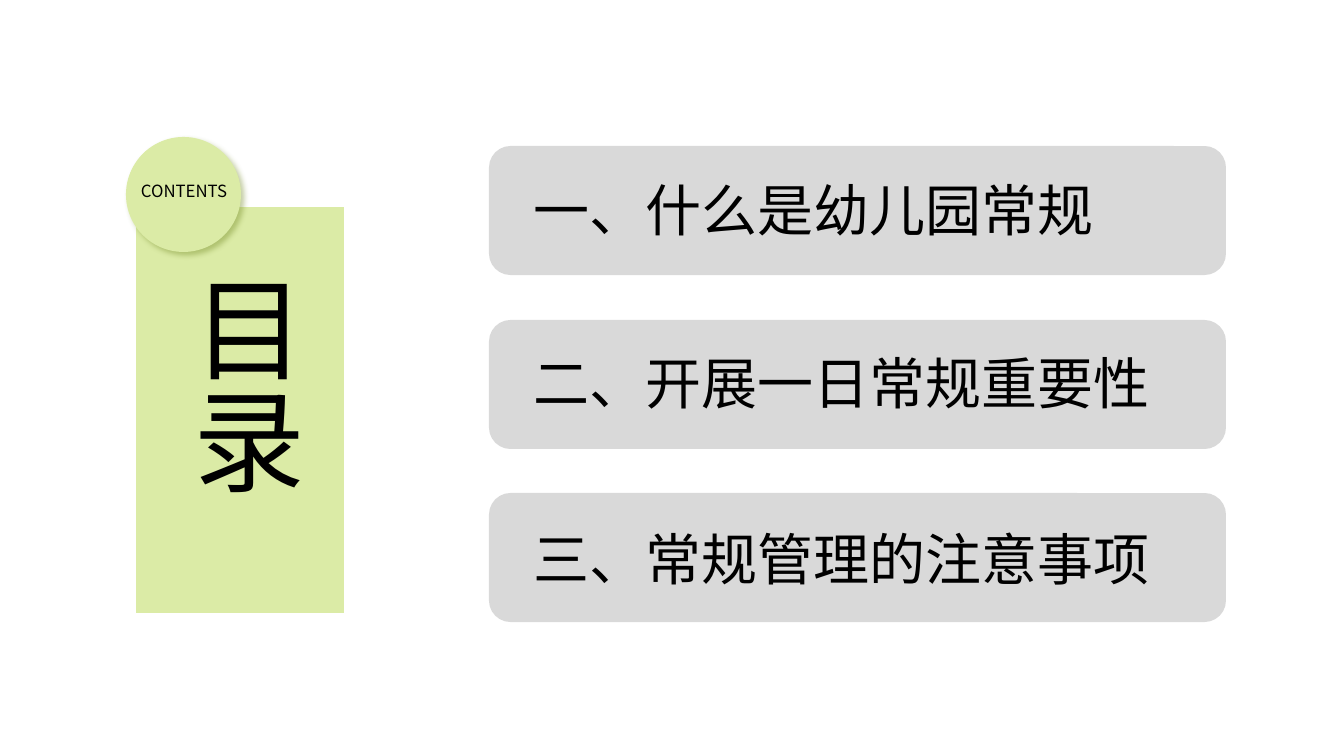
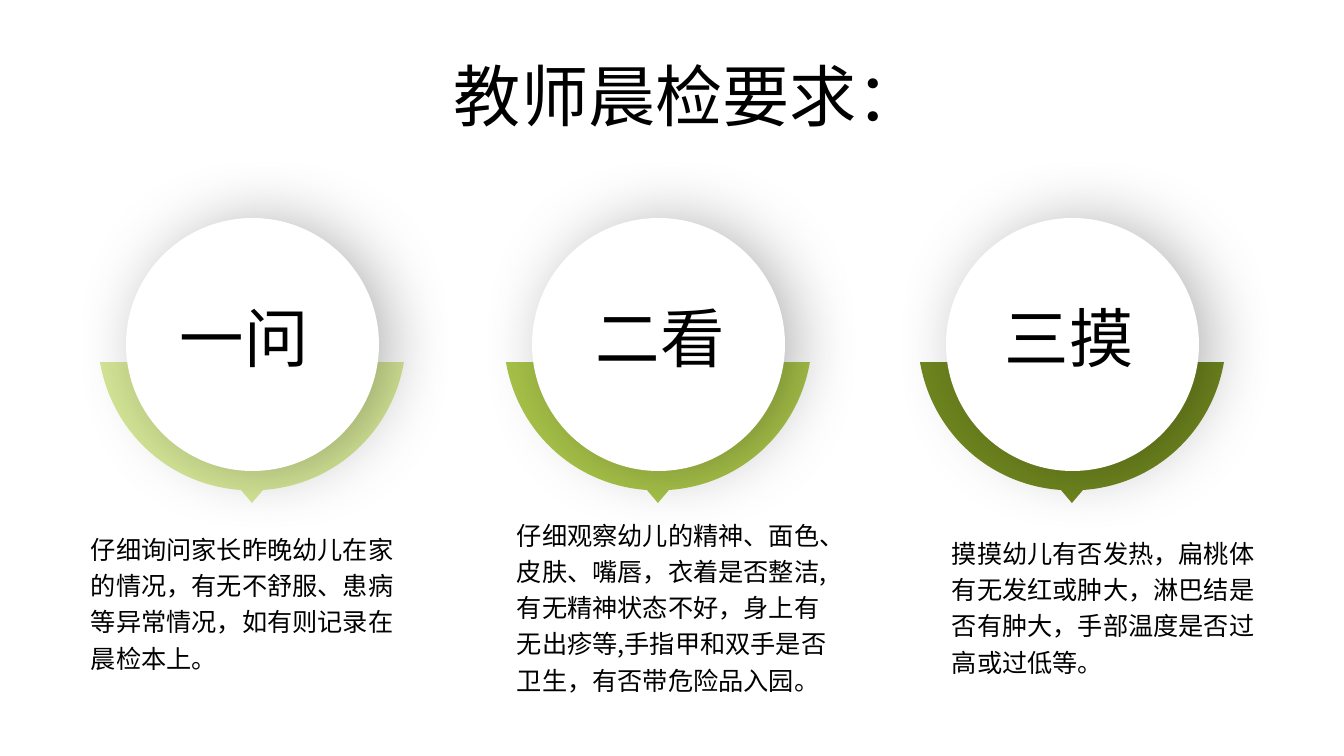
from lxml.etree import Element, SubElement
from pptx import Presentation
from pptx.dml.color import RGBColor
from pptx.enum.shapes import MSO_SHAPE
from pptx.enum.text import MSO_AUTO_SIZE, PP_ALIGN
from pptx.oxml.ns import qn
from pptx.util import Pt

PX = 12192000 / 1344
FONT = "Noto Sans CJK SC"
BLACK, WHITE, GREY = "000000", "FFFFFF", "D9D9D9"
PALE_GREEN = "DBEBA6"


def paint(shape, colour, shadow=None):
    """Fill without outline; shadow is (colour, opacity %, blur pt, distance pt, angle, scale %)."""
    shape.fill.solid()
    shape.fill.fore_color.rgb = RGBColor.from_string(colour)
    shape.line.fill.background()
    shape.shadow.inherit = False
    if shadow:
        shade, opacity, blur, distance, angle, scale = shadow
        effects = shape._element.spPr.find(qn("a:effectLst"))
        outer = SubElement(effects, qn("a:outerShdw"), blurRad=str(Pt(blur)),
                           dist=str(Pt(distance)), dir=str(angle * 60000),
                           sx=str(scale * 1000), sy=str(scale * 1000),
                           algn="ctr", rotWithShape="0")
        tint = SubElement(outer, qn("a:srgbClr"), val=shade)
        SubElement(tint, qn("a:alpha"), val=str(opacity * 1000))


def add_text(page, left, top, width, height, text, size, align=None, spacing=None):
    """Add a wrapping text box with one paragraph per line of text."""
    box = page.shapes.add_textbox(*(round(n * PX) for n in (left, top, width, height)))
    frame = box.text_frame
    frame.word_wrap = True
    frame.auto_size = MSO_AUTO_SIZE.SHAPE_TO_FIT_TEXT
    frame.text = text
    for para in frame.paragraphs:
        para.alignment = align
        para.line_spacing = spacing
        para.font.size = Pt(size)
        para.font.name = FONT
        para.font.color.rgb = RGBColor.from_string(BLACK)
        defaults = para._p.pPr.find(qn("a:defRPr"))
        SubElement(defaults, qn("a:ea"), typeface=FONT)
    return box


deck = Presentation()
deck.slide_width, deck.slide_height = round(1344 * PX), round(756 * PX)
blank = deck.slide_layouts[6]

# Contents
page = deck.slides.add_slide(blank)
chapters = [
    (146, 171, "一、什么是幼儿园常规"),
    (320, 344, "二、开展一日常规重要性"),
    (493, 520, "三、常规管理的注意事项"),
]
for bar_top, text_top, chapter in chapters:
    bar = page.shapes.add_shape(MSO_SHAPE.ROUNDED_RECTANGLE,
                                *(round(n * PX) for n in (489, bar_top, 737, 129)))
    paint(bar, GREY)
    add_text(page, 524, text_top, 667, 78, chapter, 40, PP_ALIGN.JUSTIFY)

panel = page.shapes.add_shape(MSO_SHAPE.RECTANGLE,
                              *(round(n * PX) for n in (137, 208, 206, 404)))
paint(panel, PALE_GREEN)
panel.line.color.rgb = RGBColor.from_string(PALE_GREEN)
panel.line.width = Pt(1)
SubElement(panel.line._ln, qn("a:miter"), lim="800000")
badge = page.shapes.add_shape(MSO_SHAPE.OVAL,
                              *(round(n * PX) for n in (126, 137, 115, 115)))
paint(badge, PALE_GREEN, ("6D841D", 40, 4, 3, 45, 100))
heading = add_text(page, 162, 263, 156, 257, "目录", 80, PP_ALIGN.JUSTIFY)
heading.text_frame._txBody.bodyPr.set("vert", "eaVert")
add_text(page, 131, 176, 114, 30, "CONTENTS", 12)

# Morning check
page = deck.slides.add_slide(blank)
add_text(page, 444, 49, 457, 92, "教师晨检要求：", 48)

DISC, DISC_INSET = 253, 26
BOWL_TOP = 362
# Corners of the bowl, clockwise from the right rim, measured from its top left
BOWL = [(304, 0), (163, 128), (152, 141), (141, 128), (0, 0)]
# Control points of the two curved sides, by the number of the line they replace
CURVES = {0: [(292, 70), (235, 123)], 3: [(69, 123), (12, 70)]}

# bowl left, colour, label, label left and width, note left, top and height, note
checks = [
    (100, "D5E797", "一问", 170, 161, 81, 523, 156,
     "仔细询问家长昨晚幼儿在家的情况，有无不舒服、患病等异常情况，如有则记录在晨检本上。"),
    (506, "A8C349", "二看", 586, 156, 507, 509, 194,
     "仔细观察幼儿的精神、面色、皮肤、嘴唇，衣着是否整洁,\n"
     "有无精神状态不好，身上有无出疹等,手指甲和双手是否卫生，有否带危险品入园。"),
    (920, "70871F", "三摸", 995, 166, 942, 527, 156,
     "摸摸幼儿有否发热，扁桃体有无发红或肿大，淋巴结是否有肿大，手部温度是否过高或过低等。"),
]
for (left, colour, label, label_left, label_width,
     note_left, note_top, note_height, note) in checks:
    corners = [(round((left + x) * PX), round((BOWL_TOP + y) * PX)) for x, y in BOWL]
    builder = page.shapes.build_freeform(*corners[0])
    builder.add_line_segments(corners[1:], close=True)
    bowl = builder.convert_to_shape()
    sides = list(bowl._element.iter(qn("a:lnTo")))
    for number, controls in CURVES.items():
        sides[number].tag = qn("a:cubicBezTo")
        for position, (x, y) in enumerate(controls):
            sides[number].insert(position, Element(
                qn("a:pt"), x=str(round(x * PX)), y=str(round(y * PX))))
    paint(bowl, colour)

    disc = page.shapes.add_shape(MSO_SHAPE.OVAL, *(
        round(n * PX) for n in (left + DISC_INSET, 218, DISC, DISC)))
    paint(disc, WHITE, (BLACK, 38, 55, 9, 0, 92))
    add_text(page, label_left, 293, label_width, 88, label, 46, PP_ALIGN.JUSTIFY)
    add_text(page, note_left, note_top, 332, note_height, note, 18, spacing=1.2)

deck.save("out.pptx")
